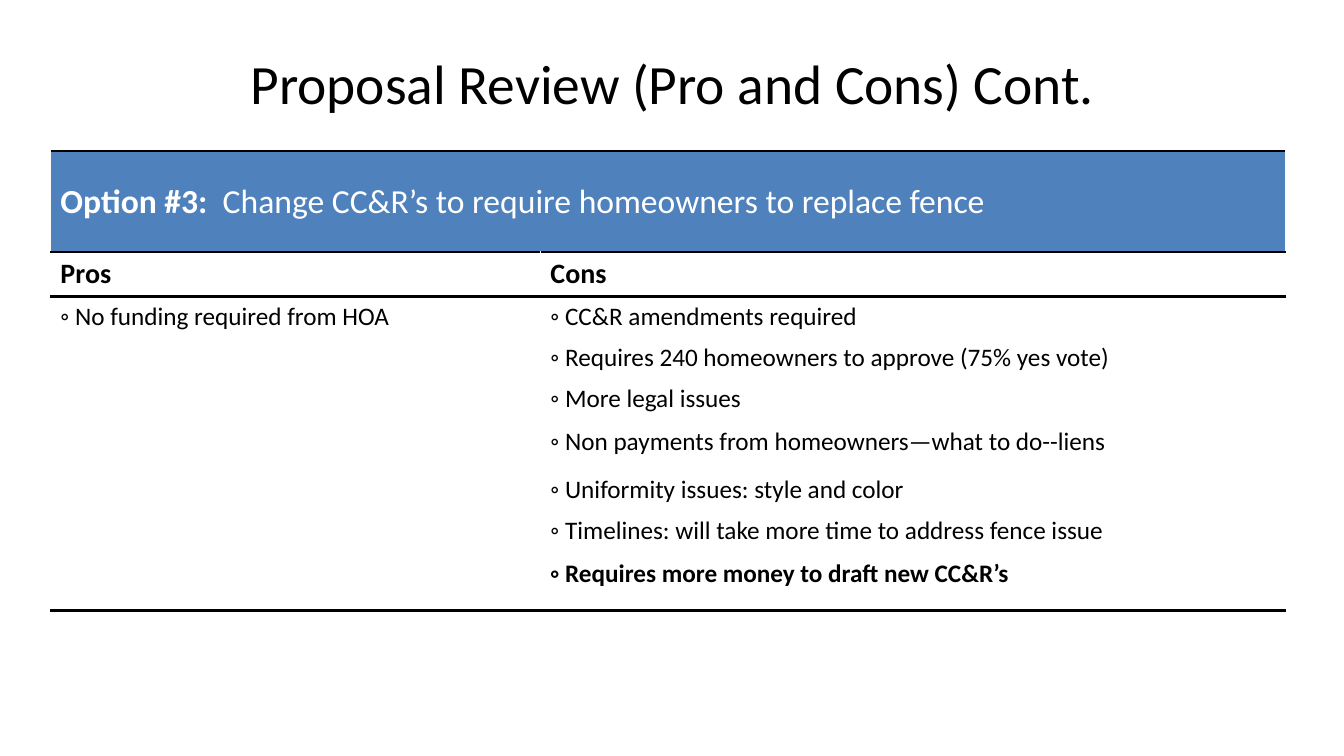
from lxml.etree import SubElement
from pptx import Presentation
from pptx.dml.color import RGBColor
from pptx.enum.text import MSO_ANCHOR as Anchor, PP_ALIGN as Align
from pptx.oxml.ns import qn
from pptx.util import Inches, Pt


def add_run(paragraph, text, size, color, bold=False):
    run = paragraph.add_run()
    run.text = text
    run.font.name = "Calibri"
    run.font.size = Pt(size)
    run.font.bold = bold
    run.font.color.rgb = RGBColor.from_string(color)


def format_cell(cell, fill, borders):
    properties = cell._tc.get_or_add_tcPr()
    for side in borders:
        line = SubElement(properties, qn(f"a:{side}"), w=str(Pt(2)))
        line_fill = SubElement(line, qn("a:solidFill"))
        SubElement(line_fill, qn("a:srgbClr"), val="000000")
    cell.fill.solid()
    cell.fill.fore_color.rgb = RGBColor.from_string(fill)


presentation = Presentation()
presentation.slide_width = Inches(13.33)
presentation.slide_height = Inches(7.5)
slide = presentation.slides.add_slide(presentation.slide_layouts[5])

# Title
title = slide.shapes.title
title.left, title.top = Inches(2.17), Inches(0.42)
title.width, title.height = Inches(9), Inches(0.8)
title.text_frame.vertical_anchor = Anchor.MIDDLE
title_paragraph = title.text_frame.paragraphs[0]
title_paragraph.alignment = Align.CENTER
add_run(title_paragraph, "Proposal Review (Pro and Cons) Cont.", 39.6, "000000")

# Table content
pros = ["No funding required from HOA"]
cons = [
    "CC&R amendments required",
    "Requires 240 homeowners to approve (75% yes vote)",
    "More legal issues",
    "Non payments from homeowners—what to do--liens",
    "Uniformity issues: style and color",
    "Timelines: will take more time to address fence issue",
    "Requires more money to draft new CC&R’s",
]
column_widths = [4.86, 7.39]
row_heights = [1, 0.44, 0.41, 0.4, 0.43, 0.47, 0.41, 0.43, 0.56]
last_row = len(row_heights) - 1

# Table grid
table = slide.shapes.add_table(
    len(row_heights), len(column_widths), Inches(0.5), Inches(1.5),
    Inches(sum(column_widths)), Inches(sum(row_heights))).table
table.horz_banding = False
for column, width in zip(table.columns, column_widths):
    column.width = Inches(width)
for row, height in zip(table.rows, row_heights):
    row.height = Inches(height)

# Option header across both columns
option = table.cell(0, 0)
option.merge(table.cell(0, 1))
for cell in table.rows[0].cells:
    format_cell(cell, "4F81BD", ["lnT", "lnB"])
option.vertical_anchor = Anchor.MIDDLE
option_paragraph = option.text_frame.paragraphs[0]
add_run(option_paragraph, "Option #3:  ", 24, "FFFFFF", bold=True)
add_run(option_paragraph, "Change CC&R’s to require homeowners to replace fence", 24, "FFFFFF")

# Pros and cons columns
for column_index, (heading, points) in enumerate([("Pros", pros), ("Cons", cons)]):
    for row_index in range(1, last_row + 1):
        borders = {1: ["lnT"], last_row: ["lnB"]}.get(row_index, [])
        format_cell(table.cell(row_index, column_index), "FFFFFF", borders)
    heading_cell = table.cell(1, column_index)
    add_run(heading_cell.text_frame.paragraphs[0], heading, 20, "000000", bold=True)
    for row_index, point in enumerate(points, start=2):
        paragraph = table.cell(row_index, column_index).text_frame.paragraphs[0]
        add_run(paragraph, f"◦ {point}", 18, "000000", bold=row_index == last_row)

presentation.save("out.pptx")
